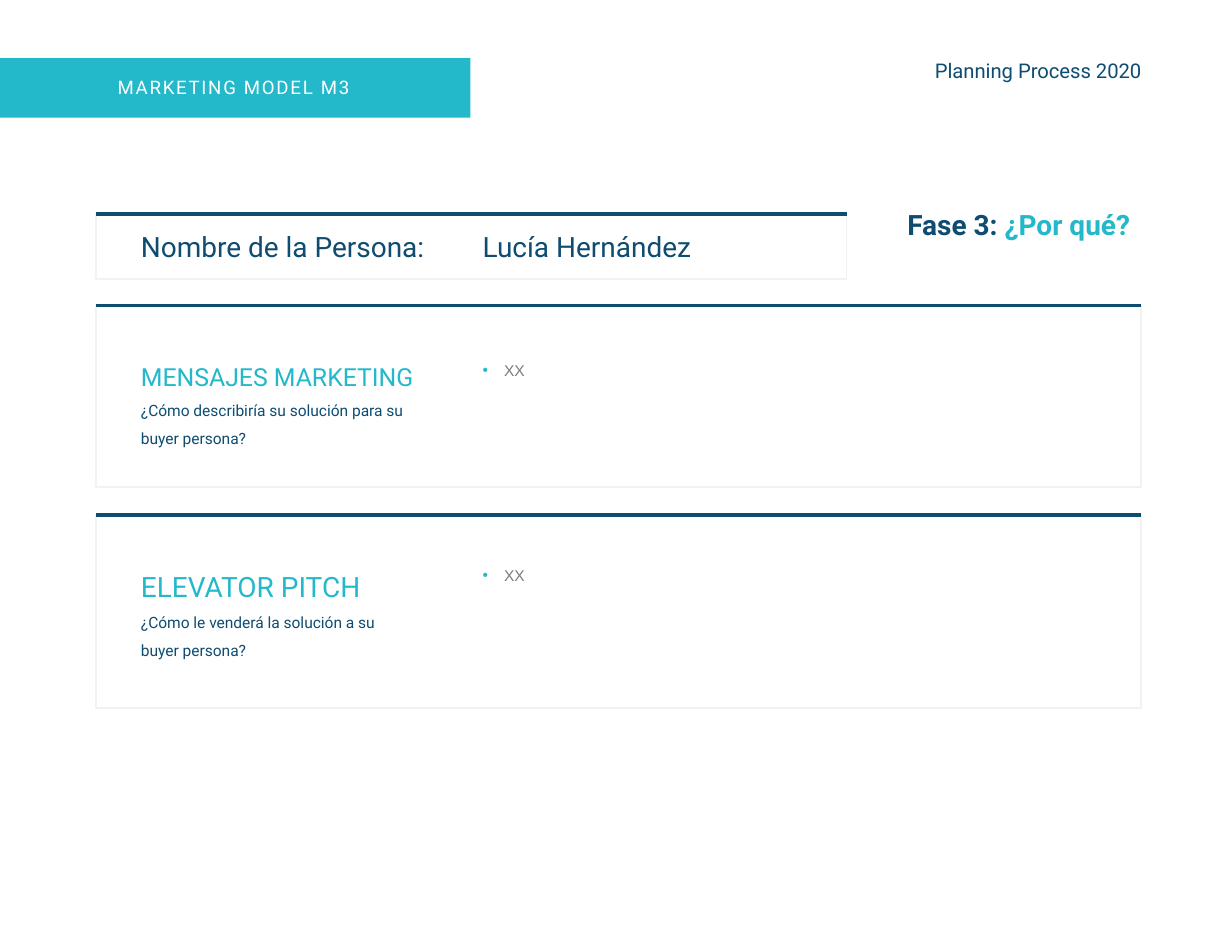
"""Build the buyer persona slide for phase 3 of the marketing model."""
from dataclasses import dataclass

from lxml import etree
from pptx import Presentation
from pptx.dml.color import RGBColor
from pptx.enum.shapes import MSO_CONNECTOR, MSO_SHAPE
from pptx.enum.text import MSO_ANCHOR, MSO_AUTO_SIZE, PP_ALIGN
from pptx.oxml.ns import qn
from pptx.util import Inches, Pt

RECTANGLE, STRAIGHT = MSO_SHAPE.RECTANGLE, MSO_CONNECTOR.STRAIGHT
LEFT, RIGHT, JUSTIFY = PP_ALIGN.LEFT, PP_ALIGN.RIGHT, PP_ALIGN.JUSTIFY
TOP, FIXED = MSO_ANCHOR.TOP, MSO_AUTO_SIZE.NONE


@dataclass(frozen=True)
class Theme:
    navy: str = "0E4C71"
    teal: str = "24B8CB"
    gray: str = "7E7C7C"
    frame: str = "F2F2F2"
    white: str = "FFFFFF"
    font: str = "Roboto"
    list_font: str = "Arial"
    heading: int = 18
    header: int = 13
    banner: int = 12
    body: int = 10


THEME = Theme()
BANNER = "MARKETING MODEL M3"
HEADER = "Planning Process 2020"
PHASE = [("Fase 3: ", THEME.navy), ("¿Por qué?", THEME.teal)]
PERSONA = ["Nombre de la Persona:", "Lucía Hernández"]
SECTIONS = [
    {"title": "MENSAJES MARKETING", "size": 16, "top": 2.73, "height": 1.62,
     "question": ["¿Cómo describiría su solución para su", "buyer persona?"],
     "question_drop": 0.32, "list_drop": 0.39, "items": ["XX"]},
    {"title": "ELEVATOR PITCH", "size": 18, "top": 4.6, "height": 1.72,
     "question": ["¿Cómo le venderá la solución a su", "buyer persona?"],
     "question_drop": 0.29, "list_drop": 0.35, "items": ["XX"]},
]

PAGE_WIDTH, PAGE_HEIGHT = 11, 8.5
MARGIN, RIGHT_EDGE = 0.86, 10.19
LABEL_LEFT, VALUE_LEFT = 1.16, 4.21
LABEL_WIDTH, VALUE_WIDTH = 2.85, 5.74
SIDE_WIDTH = 2.24
HEADER_TOP = 0.52
PERSONA_TOP, PERSONA_WIDTH, PERSONA_HEIGHT = 1.91, 6.7, 0.58


def color(value):
    return RGBColor.from_string(value)


def add_span(para, text, size, tint, font=THEME.font, bold=False):
    span = para.add_run()
    span.text = text
    span.font.size, span.font.name, span.font.bold = Pt(size), font, bold
    span.font.color.rgb = color(tint)
    return span


def place(box, left, top, width, height):
    box.left, box.top = Inches(left), Inches(top)
    box.width, box.height = Inches(width), Inches(height)


def set_frame(box, inset=True, wrap=True):
    frame = box.text_frame
    frame.word_wrap, frame.auto_size, frame.vertical_anchor = wrap, FIXED, TOP
    if not inset:
        frame.margin_left = frame.margin_right = 0
        frame.margin_top = frame.margin_bottom = 0
    return frame


def add_text(page, area, lines, align=LEFT, spacing=None, inset=True):
    box = page.shapes.add_textbox(*map(Inches, area))
    frame = set_frame(box, inset)
    for index, (text, size, tint) in enumerate(lines):
        para = frame.add_paragraph() if index else frame.paragraphs[0]
        para.alignment, para.line_spacing = align, spacing
        add_span(para, text, size, tint)
    return frame


def add_rectangle(page, *area):
    box = page.shapes.add_shape(RECTANGLE, *map(Inches, area))
    box.shadow.inherit = False
    return box


def add_panel(page, top, width, height):
    panel = add_rectangle(page, MARGIN, top, width, height)
    panel.fill.background()
    panel.line.color.rgb, panel.line.width = color(THEME.frame), Pt(1)
    ends = (MARGIN, top, MARGIN + width, top)
    rule = page.shapes.add_connector(STRAIGHT, *map(Inches, ends))
    rule.line.color.rgb, rule.line.width = color(THEME.navy), Pt(2.25)
    etree.SubElement(rule.element.spPr, qn("a:effectLst"))


def add_bullet(para):
    properties = para.element.get_or_add_pPr() if hasattr(para, "element") else para._p.get_or_add_pPr()
    properties.set("marL", str(Inches(0.19)))
    properties.set("indent", str(-Inches(0.19)))
    tint = etree.SubElement(properties, qn("a:buClr"))
    etree.SubElement(tint, qn("a:srgbClr"), val=THEME.teal)
    etree.SubElement(properties, qn("a:buFont"), typeface=THEME.list_font)
    etree.SubElement(properties, qn("a:buChar"), char="•")


def fill_list(body, top, items):
    place(body, VALUE_LEFT, top, VALUE_WIDTH, 0.3)
    frame = set_frame(body)
    for index, item in enumerate(items):
        para = frame.add_paragraph() if index else frame.paragraphs[0]
        para.alignment, para.line_spacing, para.space_before = JUSTIFY, 1.3, Pt(0)
        add_bullet(para)
        add_span(para, item, THEME.body, THEME.gray, THEME.list_font)


def add_header(page):
    banner = add_rectangle(page, 0, HEADER_TOP, 4.2, 0.53)
    banner.fill.solid()
    banner.fill.fore_color.rgb = color(THEME.teal)
    banner.line.fill.background()
    frame = add_text(page, (1.05, 0.68, 2.36, 0.2),
                     [(BANNER, THEME.banner, THEME.white)], inset=False)
    frame.paragraphs[0].runs[0].font._element.set("spc", "110")
    side = RIGHT_EDGE - SIDE_WIDTH
    add_text(page, (side, HEADER_TOP, SIDE_WIDTH, 0.22),
             [(HEADER, THEME.header, THEME.navy)], RIGHT, inset=False)
    title = page.shapes.title
    place(title, side, 1.8, SIDE_WIDTH, 0.4)
    para = set_frame(title, wrap=False).paragraphs[0]
    para.alignment = RIGHT
    for text, tint in PHASE:
        add_span(para, text, THEME.heading, tint, bold=True)


def add_persona(page):
    add_panel(page, PERSONA_TOP, PERSONA_WIDTH, PERSONA_HEIGHT)
    for text, left in zip(PERSONA, (LABEL_LEFT, VALUE_LEFT)):
        add_text(page, (left, PERSONA_TOP + 0.09, LABEL_WIDTH, 0.4),
                 [(text, THEME.heading, THEME.navy)])


def add_section(page, section, body):
    top = section["top"]
    add_panel(page, top, RIGHT_EDGE - MARGIN, section["height"])
    lines = [(section["title"], section["size"], THEME.teal)]
    lines += [(text, THEME.body, THEME.navy) for text in section["question"]]
    add_text(page, (LABEL_LEFT, top + section["question_drop"], LABEL_WIDTH, 1),
             lines, spacing=1.5)
    fill_list(body, top + section["list_drop"], section["items"])


def main():
    deck = Presentation()
    deck.slide_width, deck.slide_height = Inches(PAGE_WIDTH), Inches(PAGE_HEIGHT)
    page = deck.slides.add_slide(deck.slide_layouts.get_by_name("Two Content"))
    bodies = [page.placeholders[1], page.placeholders[2]]
    add_header(page)
    add_persona(page)
    for section, body in zip(SECTIONS, bodies):
        add_section(page, section, body)
    deck.save("out.pptx")


if __name__ == "__main__":
    main()
